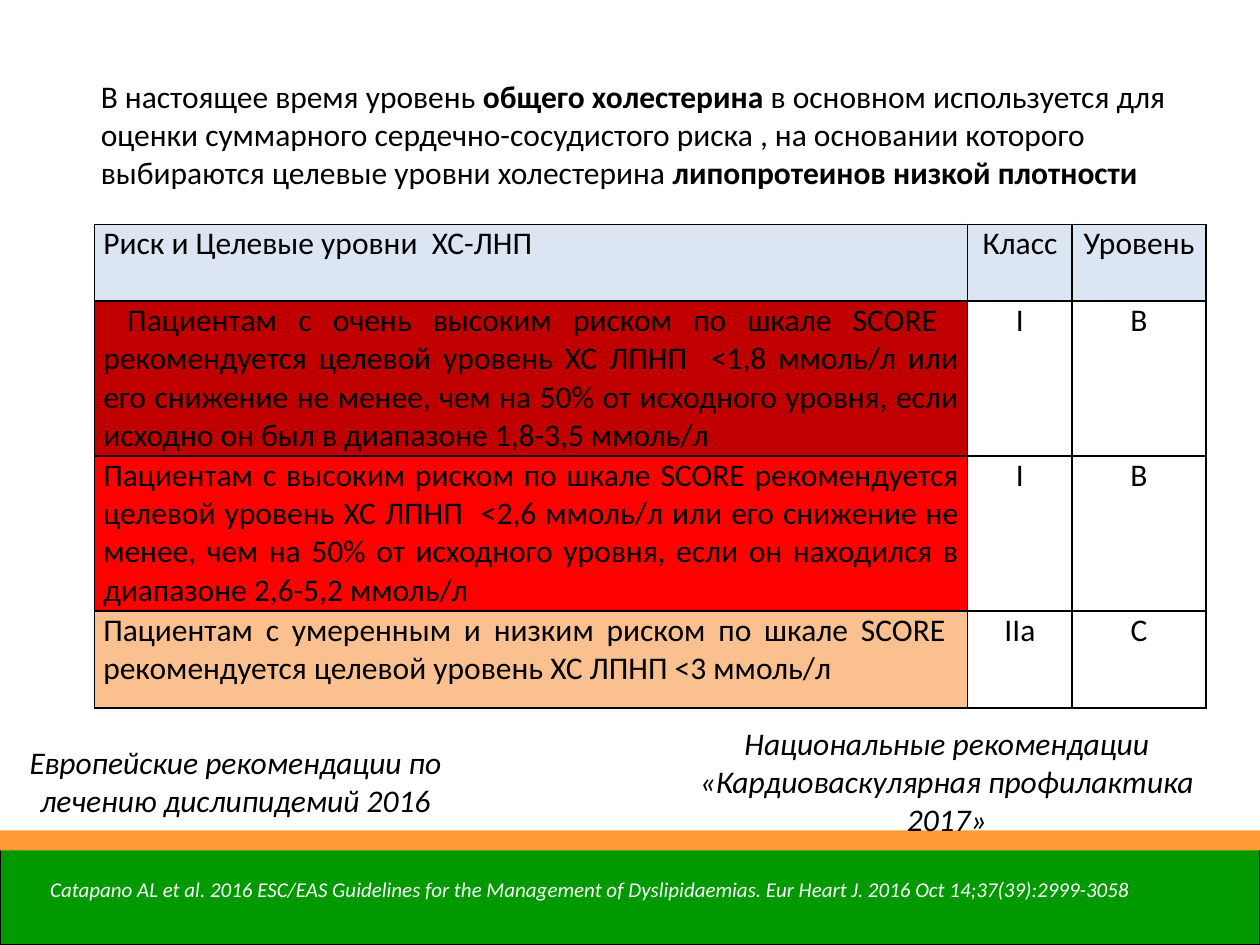
from lxml import etree
from pptx import Presentation
from pptx.dml.color import RGBColor
from pptx.enum import shapes, text
from pptx.oxml import ns
from pptx.util import Inches, Pt

BLACK = RGBColor(0x00, 0x00, 0x00)
WHITE = RGBColor(0xFF, 0xFF, 0xFF)
GREEN = RGBColor(0x00, 0x99, 0x00)
ORANGE = RGBColor(0xFF, 0x99, 0x33)
PALE_BLUE = RGBColor(0xDC, 0xE6, 0xF2)
DARK_RED = RGBColor(0xC0, 0x00, 0x00)
RED = RGBColor(0xFF, 0x00, 0x00)
PEACH = RGBColor(0xFA, 0xC0, 0x90)
LEFT, CENTER, JUSTIFY = text.PP_ALIGN.LEFT, text.PP_ALIGN.CENTER, text.PP_ALIGN.JUSTIFY


def style(frame, align, size=18, color=BLACK, italic=False):
    for para in frame.paragraphs:
        para.alignment = align
        for span in para.runs:
            span.font.name = "Calibri"
            span.font.size = Pt(size)
            span.font.color.rgb = color
            span.font.italic = italic


def add_text(left, top, width, height, wording, wrap=True):
    box = page.shapes.add_textbox(Inches(left), Inches(top), Inches(width), Inches(height))
    frame = box.text_frame
    frame.word_wrap = wrap
    frame.vertical_anchor = text.MSO_ANCHOR.MIDDLE
    frame.text = wording
    return frame


deck = Presentation()
deck.slide_width, deck.slide_height = Inches(10), Inches(7.5)
page = deck.slides.add_slide(deck.slide_layouts[6])

for top, height, color in [(6.74, 0.76, GREEN), (6.59, 0.16, ORANGE)]:
    band = page.shapes.add_shape(
        shapes.MSO_SHAPE.RECTANGLE, 0, Inches(top), Inches(10), Inches(height))
    band.shadow.inherit = False
    band.fill.solid()
    band.fill.fore_color.rgb = color
    if color == GREEN:
        band.line.color.rgb = BLACK
        band.line.width = Pt(0.75)
    else:
        band.line.fill.background()

intro = add_text(0.31, 0.56, 9.42, 1.01, "")
intro.margin_left = Inches(0.49)
for wording, bold in [
    ("В настоящее время уровень ", False),
    ("общего холестерина", True),
    (" в основном используется для оценки суммарного сердечно-сосудистого риска , "
     "на основании которого выбираются целевые уровни холестерина ", False),
    ("липопротеинов низкой плотности", True),
]:
    span = intro.paragraphs[0].add_run()
    span.text = wording
    span.font.bold = bold
style(intro, LEFT)

rows = [
    (0.61, PALE_BLUE, "Риск и Целевые уровни  ХС-ЛНП", "Класс", "Уровень"),
    (1.23, DARK_RED,
     "Пациентам с очень высоким риском по шкале SCORE  рекомендуется целевой уровень "
     "ХС ЛПНП  <1,8 ммоль/л или его снижение не менее, чем на 50% от исходного уровня, "
     "если исходно он был в диапазоне 1,8-3,5 ммоль/л", "I", "В"),
    (1.23, RED,
     "Пациентам с высоким риском по шкале SCORE рекомендуется целевой уровень "
     "ХС ЛПНП  <2,6 ммоль/л или его снижение не менее, чем на 50% от исходного уровня, "
     "если он находился в диапазоне 2,6-5,2 ммоль/л", "I", "В"),
    (0.77, PEACH,
     "Пациентам с умеренным и низким риском по шкале SCORE  рекомендуется целевой "
     "уровень ХС ЛПНП <3 ммоль/л", "IIа", "С"),
]
table = page.shapes.add_table(
    4, 3, Inches(0.75), Inches(1.78), Inches(8.82), Inches(3.84)).table
for column, width in zip(table.columns, [6.93, 0.83, 1.06]):
    column.width = Inches(width)
for r, (height, color, *wordings) in enumerate(rows):
    table.rows[r].height = Inches(height)
    for c, wording in enumerate(wordings):
        cell = table.cell(r, c)
        cell.margin_left = cell.margin_right = Inches(0.07)
        cell.margin_top = cell.margin_bottom = 0
        cell.text_frame.text = wording
        style(cell.text_frame, CENTER if c else JUSTIFY)
        properties = cell._tc.get_or_add_tcPr()
        for side in ("lnL", "lnR", "lnT", "lnB"):
            border = etree.SubElement(properties, ns.qn("a:" + side), w=str(Pt(1)))
            fill = etree.SubElement(border, ns.qn("a:solidFill"))
            etree.SubElement(fill, ns.qn("a:srgbClr"), val=str(BLACK))
        if c == 0 or r == 0:
            cell.fill.solid()
            cell.fill.fore_color.rgb = color
        else:
            cell.fill.background()
first_risk = table.cell(1, 0).text_frame.paragraphs[0]
first_risk._p.get_or_add_pPr().set("indent", str(Inches(0.19)))

european = add_text(0.12, 5.84, 3.5, 0.71,
                    "Европейские рекомендации по лечению дислипидемий 2016")
national = add_text(5.31, 5.84, 4.41, 0.71,
                    "Национальные рекомендации\n«Кардиоваскулярная профилактика 2017»", wrap=False)
for frame in (european, national):
    style(frame, CENTER, italic=True)

citation = add_text(
    0, 6.82, 9.37, 0.47,
    "Catapano AL et al. 2016 ESC/EAS Guidelines for the Management of Dyslipidaemias. "
    "Eur Heart J. 2016 Oct 14;37(39):2999-3058", wrap=False)
style(citation, CENTER, 12, WHITE, italic=True)

deck.save("out.pptx")
